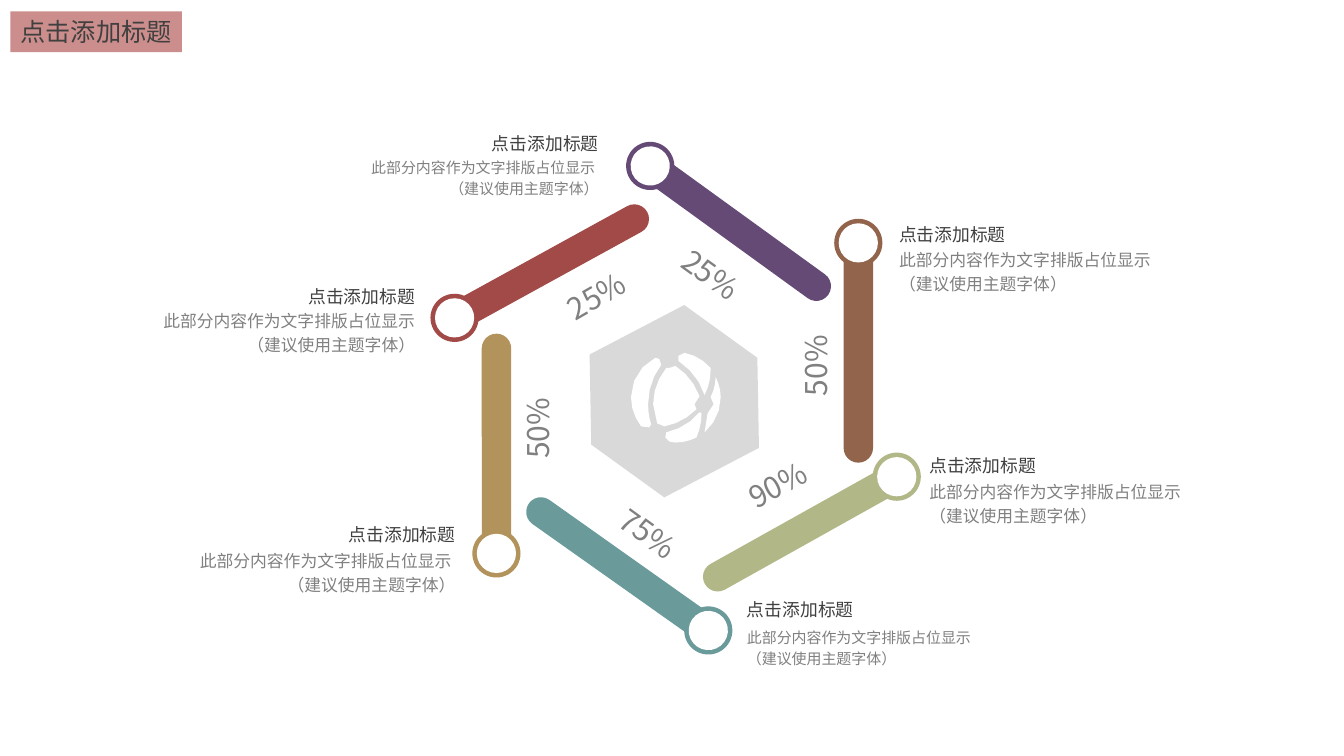
from math import cos, dist, radians, sin
from lxml import etree
from pptx import Presentation
from pptx.dml.color import RGBColor
from pptx.enum.shapes import MSO_SHAPE
from pptx.enum.text import MSO_ANCHOR, PP_ALIGN
from pptx.oxml.ns import qn
from pptx.util import Pt

RECTANGLE = MSO_SHAPE.RECTANGLE
ROUNDED = MSO_SHAPE.ROUNDED_RECTANGLE
OVAL = MSO_SHAPE.OVAL
HEXAGON = MSO_SHAPE.HEXAGON
LEFT, CENTER, RIGHT = PP_ALIGN.LEFT, PP_ALIGN.CENTER, PP_ALIGN.RIGHT
MIDDLE = MSO_ANCHOR.MIDDLE
FONT = "Noto Sans CJK SC"
HEADING = "点击添加标题"
DARK, GREY = "404040", "808080"


def paint(shape, color):
    shape.shadow.inherit = False
    shape.fill.solid()
    shape.fill.fore_color.rgb = RGBColor.from_string(color)
    shape.line.fill.background()


def write(box, lines, size, color, align=LEFT, wrap=False, spacing=1.0):
    frame = box.text_frame
    frame.margin_left = frame.margin_right = frame.margin_top = frame.margin_bottom = 0
    frame.vertical_anchor = MIDDLE
    frame.word_wrap = wrap
    para = frame.paragraphs[0]
    para.alignment = align
    para.line_spacing = spacing
    for number, line in enumerate(lines):
        if number:
            para.add_line_break()
        span = para.add_run()
        span.text = line
        span.font.size = Pt(size)
        span.font.color.rgb = RGBColor.from_string(color)
        span.font.name = FONT
        etree.SubElement(span.font._element, qn("a:ea"), typeface=FONT)


deck = Presentation()
deck.slide_width, deck.slide_height = Pt(960), Pt(540)
page = deck.slides.add_slide(deck.slide_layouts[6])
shapes = page.shapes

hexagon = shapes.add_shape(HEXAGON, Pt(414.7), Pt(229), Pt(133.9), Pt(115.2))
hexagon.rotation = 332.4
paint(hexagon, "D9D9D9")

BAR_WIDTH, BAR_LENGTH, RING, HOLE, REACH = 21, 162, 34.4, 28, 76
bars = [
    (391.3, 190.4, 241.2, "A24A48"),
    (354.6, 319.3, 180, "B2935C"),
    (443.9, 406.4, 125.3, "6A9A9A"),
    (574.2, 377.6, 60.8, "B2B787"),
    (613.1, 249.5, 0, "91644B"),
    (526, 163.1, 305.9, "654A76"),
]
for x, y, angle, color in bars:
    end_x = x + REACH * sin(radians(angle))
    end_y = y - REACH * cos(radians(angle))
    for kind, mid_x, mid_y, width, height, fill in (
        (ROUNDED, x, y, BAR_WIDTH, BAR_LENGTH, color),
        (OVAL, end_x, end_y, RING, RING, color),
        (OVAL, end_x, end_y, HOLE, HOLE, "FFFFFF"),
    ):
        part = shapes.add_shape(kind, Pt(mid_x - width / 2), Pt(mid_y - height / 2),
                                Pt(width), Pt(height))
        part.rotation = angle
        if kind == ROUNDED:
            part.adjustments[0] = 0.5
        paint(part, fill)

labels = [
    (642.2, 160.6, 175, 261.4, 12, LEFT, " "),
    (663.8, 325.4, 340.6, 239.8, 12, LEFT, " "),
    (296.6, 204.5, 218.2, 239.8, 12, RIGHT, ""),
    (325.4, 374.4, 389.5, 268.6, 12, RIGHT, " "),
    (427.7, 95, 108, 193.7, 10.7, RIGHT, " "),
    (533.5, 428.4, 443.5, 193.7, 10.7, LEFT, " "),
]
HEADING_WIDTH = 78
for edge, heading_top, body_top, body_width, size, align, tail in labels:
    shift = 1 if align == RIGHT else 0
    body = shapes.add_textbox(Pt(edge - shift * body_width), Pt(body_top), Pt(body_width), Pt(36))
    write(body, ["此部分内容作为文字排版占位显示" + tail, "（建议使用主题字体）"],
          size, GREY, align, True, 1.2)
    heading = shapes.add_textbox(Pt(edge - shift * HEADING_WIDTH), Pt(heading_top),
                                 Pt(HEADING_WIDTH), Pt(14.4))
    write(heading, [HEADING], 12.7, DARK, align)

globe_outlines = [
    [(694, 393), (691, 395), (689, 397), (689, 401), (689, 403), (689, 404), (691, 406),
     (682, 415), (671, 421), (659, 423), (658, 421), (655, 420), (652, 420),
     (650, 413), (648, 407), (648, 401), (648, 387), (653, 375), (661, 365),
     (662, 365), (663, 365), (664, 365), (666, 365), (668, 364), (670, 363),
     (681, 370), (689, 380), (694, 393)],
    [(673, 356), (673, 356), (673, 357), (673, 358), (685, 366), (695, 378), (699, 392),
     (703, 384), (705, 376), (705, 367), (705, 366), (705, 366), (705, 365),
     (698, 357), (689, 352), (679, 350), (677, 351), (675, 352), (673, 353),
     (673, 354), (673, 355), (673, 356)],
    [(646, 421), (644, 415), (643, 408), (643, 401), (643, 386), (648, 372), (656, 362),
     (655, 360), (654, 358), (654, 356), (653, 355), (651, 355), (650, 355),
     (636, 362), (626, 377), (626, 394), (626, 405), (630, 415), (636, 423),
     (639, 423), (641, 424), (644, 424), (644, 423), (645, 422), (646, 421)],
    [(710, 374), (710, 381), (708, 388), (705, 394), (707, 395), (708, 398), (708, 401),
     (708, 405), (706, 408), (702, 410), (702, 417), (701, 423), (699, 429),
     (709, 420), (715, 408), (715, 394), (715, 387), (713, 380), (710, 374)],
    [(694, 409), (686, 419), (674, 426), (661, 429), (661, 431), (661, 433), (660, 434),
     (661, 436), (663, 437), (664, 438), (666, 439), (668, 439), (670, 439),
     (678, 439), (685, 437), (691, 434), (694, 427), (696, 419), (696, 410),
     (696, 410), (695, 410), (694, 409)],
]
UNIT, LONG_CURVE = 0.72, 20
builder = None
for outline in globe_outlines:
    start_x, start_y = (Pt(value * UNIT) for value in outline[0])
    if builder is None:
        builder = shapes.build_freeform(start_x, start_y)
    else:
        builder.move_to(start_x, start_y)
    points = []
    for first in range(0, len(outline) - 1, 3):
        curve = outline[first:first + 4]
        steps = 3 if dist(curve[0], curve[3]) > LONG_CURVE else 1
        for step in range(1, steps + 1):
            t = step / steps
            weights = ((1 - t) ** 3, 3 * t * (1 - t) ** 2, 3 * t * t * (1 - t), t ** 3)
            points.append(tuple(
                Pt(UNIT * sum(weight * point[axis] for weight, point in zip(weights, curve)))
                for axis in (0, 1)))
    builder.add_line_segments(points, close=True)
paint(builder.convert_to_shape(), "FFFFFF")

PERCENT_WIDTH, PERCENT_HEIGHT = 46, 21.6
percentages = [
    ("25%", 425.9, 211.2, 330.1),
    ("90%", 555.5, 346.1, 332.6),
    ("50%", 383.8, 305.9, 270),
    ("75%", 463.1, 380.9, 36),
    ("50%", 582.5, 261.2, 270),
    ("25%", 507.7, 195.9, 36),
]
for text, x, y, angle in percentages:
    box = shapes.add_textbox(Pt(x - PERCENT_WIDTH / 2), Pt(y - PERCENT_HEIGHT / 2),
                             Pt(PERCENT_WIDTH), Pt(PERCENT_HEIGHT))
    box.rotation = angle
    write(box, [text], 21.4, GREY, CENTER)

title = shapes.add_shape(RECTANGLE, Pt(7.5), Pt(8.2), Pt(122.4), Pt(29))
paint(title, "CC8E8C")
write(title, [HEADING], 18, DARK, CENTER)

deck.save("out.pptx")
